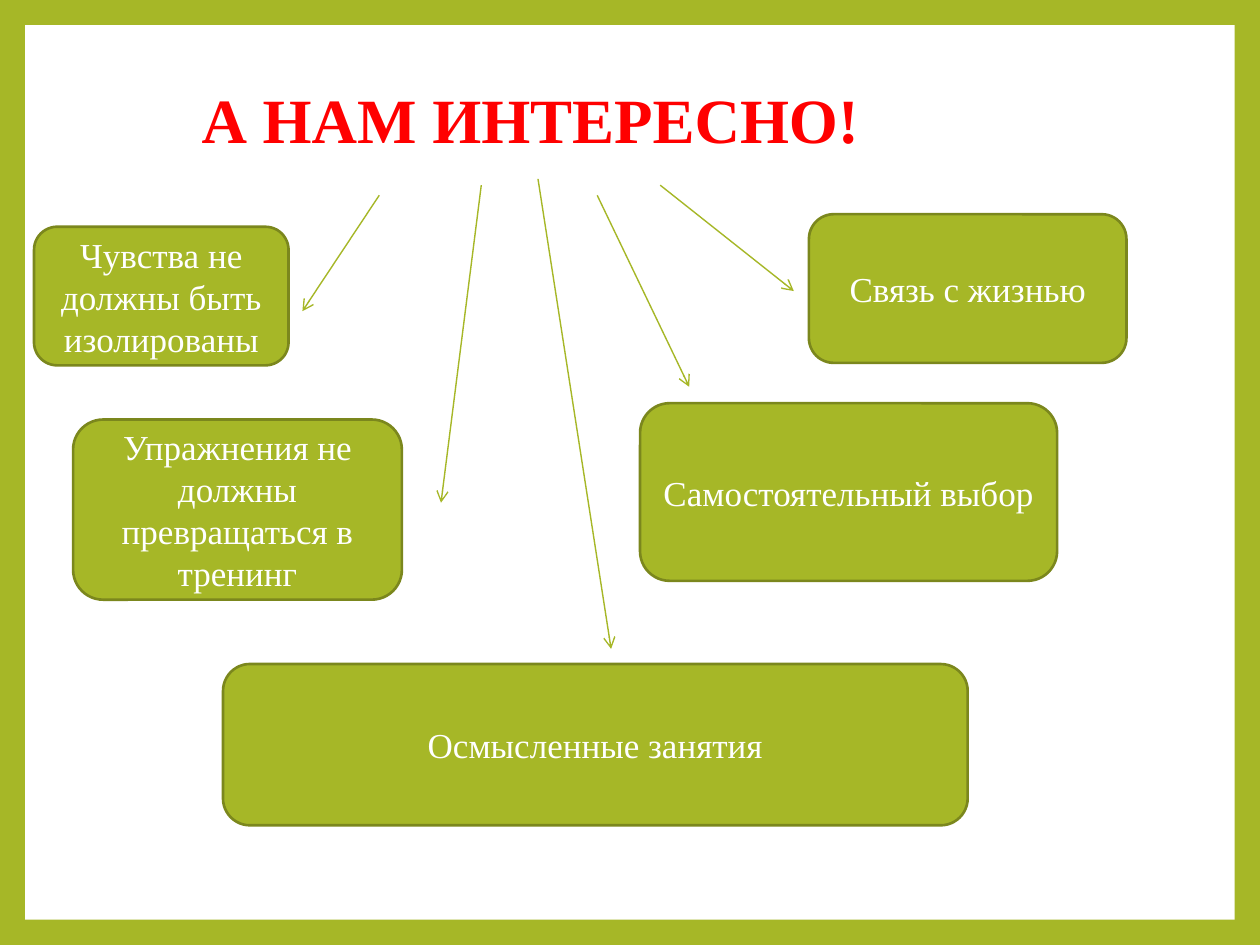
from dataclasses import dataclass

from lxml.etree import SubElement
from pptx import Presentation
from pptx.dml.color import RGBColor
from pptx.enum.shapes import MSO_CONNECTOR as Connector, MSO_SHAPE as Preset
from pptx.enum.text import MSO_ANCHOR as Anchor, MSO_AUTO_SIZE as AutoSize, PP_ALIGN as Align
from pptx.oxml.ns import qn
from pptx.util import Inches, Pt


@dataclass(frozen=True)
class Theme:
    """Colours, type sizes and line widths of the slide."""
    green: str = "A6B727"
    outline: str = "7B871D"
    white: str = "FFFFFF"
    red: str = "FF0000"
    font: str = "Times New Roman"
    title_size: int = 36
    body_size: int = 20
    box_line: float = 1.5
    arrow_line: float = 0.79


THEME = Theme()
COLUMNS, ROWS = 100, 75
CELL = Inches(0.1)

BOXES = [
    ("Чувства не должны быть изолированы", (2.7, 18, 20.2, 11)),
    ("Самостоятельный выбор", (50.8, 32, 33.1, 14.1)),
    ("Связь с жизнью", (64.2, 17, 25.2, 11.8)),
    ("Осмысленные занятия", (17.7, 52.7, 59.1, 12.8)),
    ("Упражнения не должны превращаться в тренинг", (5.8, 33.3, 26.1, 14.3)),
]
ARROWS = [
    ((30.1, 15.5), (24, 24.7)),
    ((52.4, 14.7), (63, 23.1)),
    ((38.2, 14.7), (35, 39.9)),
    ((42.7, 14.2), (48.5, 51.5)),
    ((47.4, 15.5), (54.7, 30.7)),
]


def grid(*cells):
    """Convert grid cells to slide lengths."""
    return [int(cell * CELL) for cell in cells]


def paint(fill, colour):
    """Apply a solid colour to a fill."""
    fill.solid()
    fill.fore_color.rgb = RGBColor.from_string(colour)


def write_text(shape, text, size=THEME.body_size, colour=THEME.white, bold=False, spacing=1.0):
    """Write centred text into a shape."""
    frame = shape.text_frame
    frame.word_wrap = True
    frame.auto_size = AutoSize.NONE
    frame.vertical_anchor = Anchor.MIDDLE
    paragraph = frame.paragraphs[0]
    paragraph.alignment = Align.CENTER
    paragraph.line_spacing = spacing
    run = paragraph.add_run()
    run.text = text
    run.font.name = THEME.font
    run.font.size = Pt(size)
    run.font.bold = bold
    run.font.color.rgb = RGBColor.from_string(colour)


def add_block(slide, preset, cells, colour, outline=None):
    """Add a filled shape with an optional outline."""
    shape = slide.shapes.add_shape(preset, *grid(*cells))
    shape.shadow.inherit = False
    paint(shape.fill, colour)
    if outline:
        paint(shape.line.fill, outline)
        shape.line.width = Pt(THEME.box_line)
    else:
        shape.line.fill.background()
    return shape


def add_title(slide, text, cells):
    """Place and fill the title placeholder."""
    title = slide.shapes.title
    title.left, title.top, title.width, title.height = grid(*cells)
    write_text(title, text, size=THEME.title_size, colour=THEME.red, bold=True, spacing=0.9)
    return title


def add_arrow(slide, start, end):
    """Add a thin straight line with an open arrowhead."""
    arrow = slide.shapes.add_connector(Connector.STRAIGHT, *grid(*start, *end))
    paint(arrow.line.fill, THEME.green)
    arrow.line.width = Pt(THEME.arrow_line)
    properties = arrow.element.spPr
    SubElement(properties.find(qn("a:ln")), qn("a:tailEnd"), type="arrow")
    SubElement(properties, qn("a:effectLst"))


def main():
    """Build and save the slide."""
    presentation = Presentation()
    presentation.slide_width, presentation.slide_height = grid(COLUMNS, ROWS)
    slide = presentation.slides.add_slide(presentation.slide_layouts[5])
    paint(slide.background.fill, THEME.green)
    panel = add_block(slide, Preset.RECTANGLE, (2, 2, COLUMNS - 4, ROWS - 4), THEME.white)
    title = add_title(slide, "А НАМ ИНТЕРЕСНО!", (7.4, 6.6, 69.4, 6.4))
    title.element.addprevious(panel.element)
    for text, cells in BOXES:
        write_text(add_block(slide, Preset.ROUNDED_RECTANGLE, cells, THEME.green, THEME.outline), text)
    for start, end in ARROWS:
        add_arrow(slide, start, end)
    presentation.save("out.pptx")


if __name__ == "__main__":
    main()
